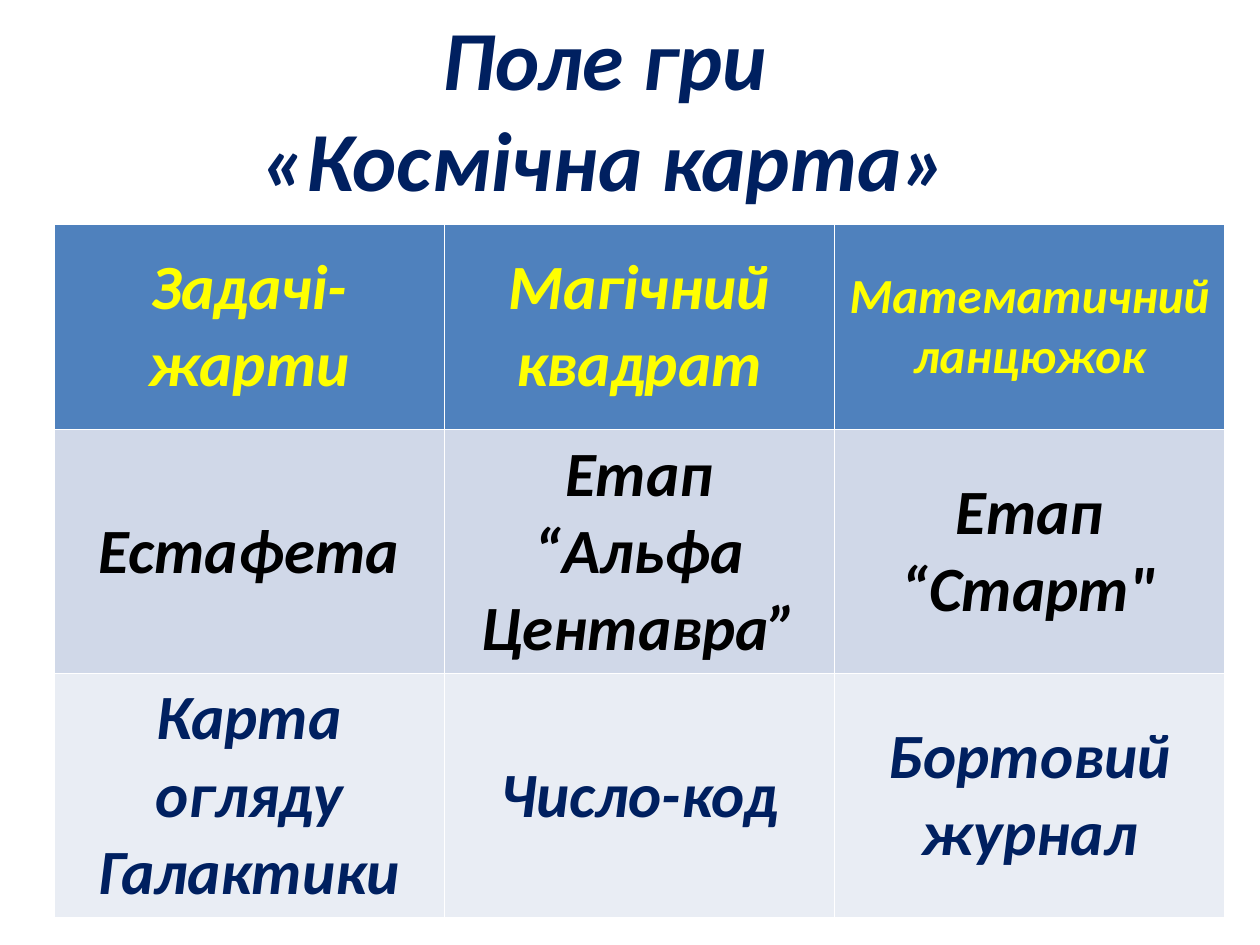
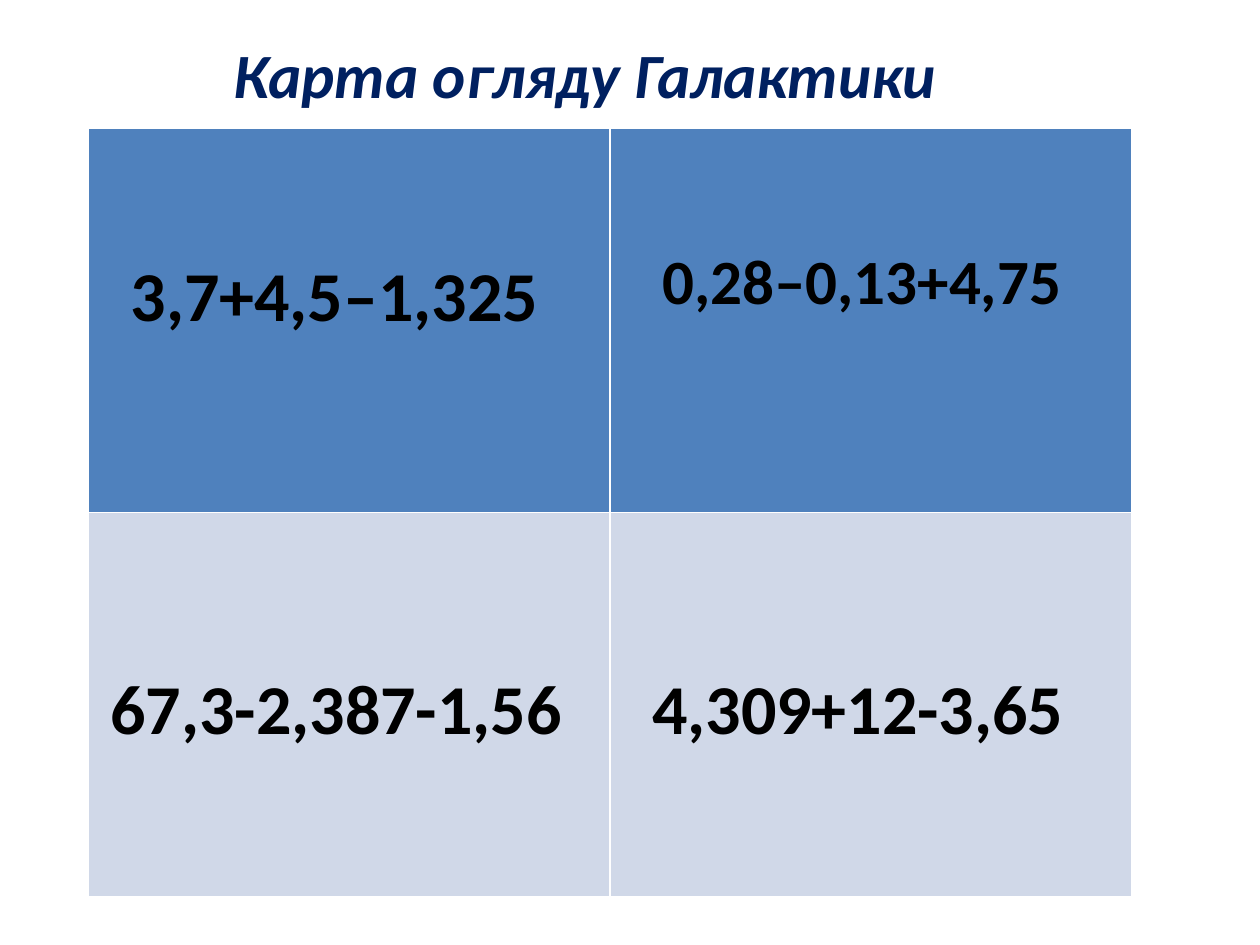
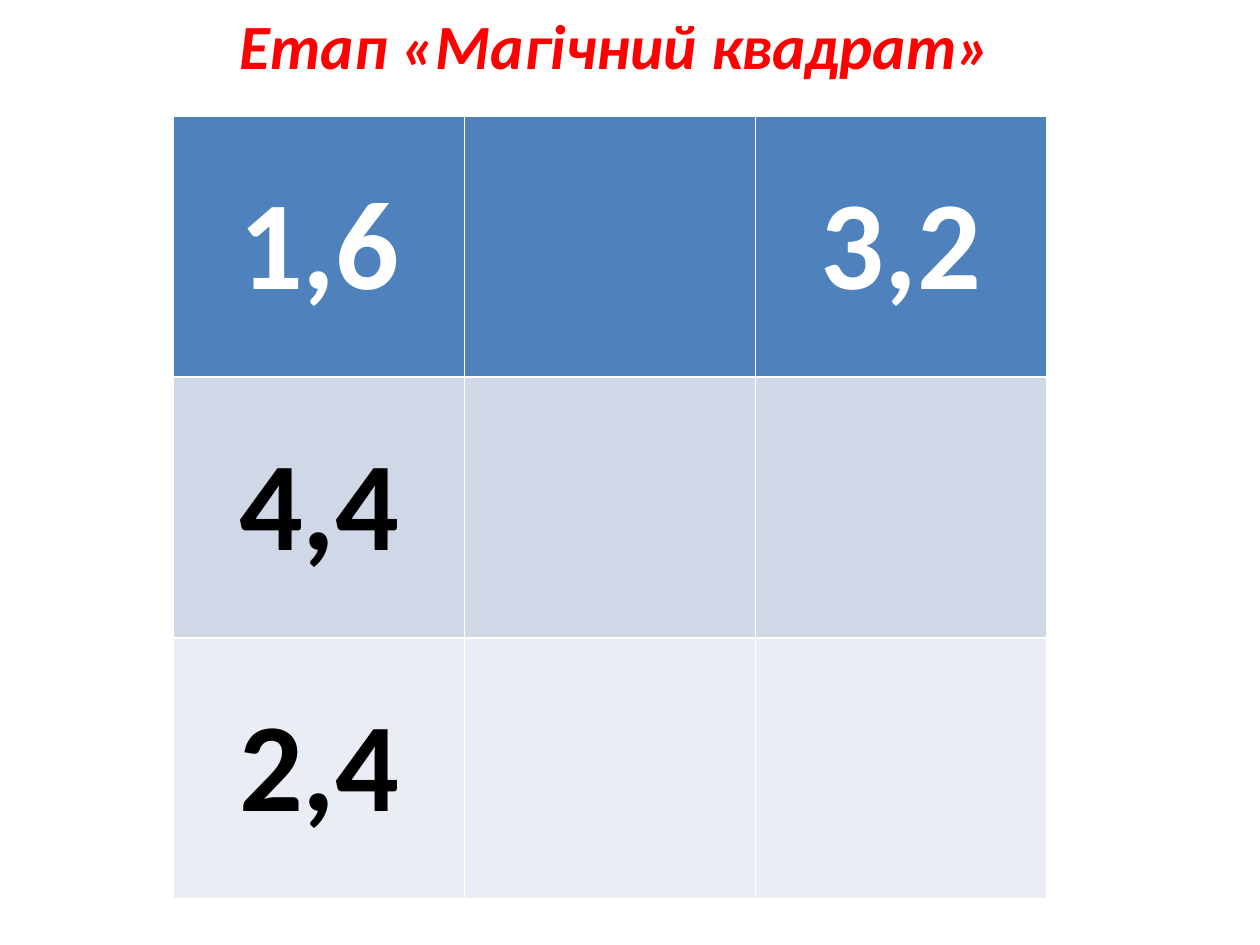
from lxml import etree
from pptx import Presentation
from pptx.dml.color import RGBColor
from pptx.enum.text import MSO_ANCHOR as Anchor, MSO_AUTO_SIZE as AutoSize, PP_ALIGN as Align
from pptx.oxml import parse_xml
from pptx.oxml.ns import nsdecls
from pptx.util import Cm, Pt

NAVY = RGBColor(0x00, 0x20, 0x60)
RED = RGBColor(0xFF, 0x00, 0x00)
YELLOW = RGBColor(0xFF, 0xFF, 0x00)
WHITE = RGBColor(0xFF, 0xFF, 0xFF)
BLACK = RGBColor(0x00, 0x00, 0x00)
HEADER_BLUE = RGBColor(0x4F, 0x81, 0xBD)
BAND_DARK = RGBColor(0xD0, 0xD8, 0xE8)
BAND_LIGHT = RGBColor(0xE9, 0xED, 0xF4)
ROW_FILLS = [HEADER_BLUE, BAND_DARK, BAND_LIGHT]
FONT = "Calibri"
TITLE_ONLY = 5

SLIDES = [
    {
        "title": {"text": "Поле гри\n«Космічна карта»", "box": (1.09, 0, 22.2, 4.37),
                  "size": 48, "color": NAVY},
        "table": {
            "rows": [
                ["Задачі- жарти", "Магічний квадрат", "Математичний ланцюжок"],
                ["Естафета", "Етап “Альфа Центавра”", "Етап “Старт\""],
                ["Карта огляду Галактики", "Число-код", "Бортовий журнал"],
            ],
            "box": (1.09, 4.52, 23.6, 12.42),
            "row_colors": [YELLOW, BLACK, NAVY],
            "size": 36, "italic": True, "small": {"Математичний ланцюжок": 28},
        },
        "expressions": [],
    },
    {
        "title": {"text": "Карта огляду Галактики", "box": (3.76, 0.58, 16.08, 1.8),
                  "size": 36, "color": NAVY},
        "table": {
            "rows": [["", ""], ["", ""]],
            "box": (1.78, 2.59, 21.03, 15.48),
            "row_colors": [BLACK, BLACK],
            "size": 18, "italic": False, "small": {},
        },
        "expressions": [
            ("3,7+4,5–1,325", 2.39, 4.95, 40),
            ("0,28–0,13+4,75", 13.11, 4.75, 36),
            ("4,309+12-3,65", 12.9, 13.28, 40),
            ("67,3-2,387-1,56", 1.98, 13.28, 40),
        ],
    },
    {
        "title": {"text": "Етап «Магічний квадрат»", "box": (4.57, 0, 15.67, 1.8),
                  "size": 36, "color": RED},
        "table": {
            "rows": [["1,6", "", "3,2"], ["4,4", "", ""], ["2,4", "", ""]],
            "box": (3.5, 2.34, 17.6, 15.78),
            "row_colors": [WHITE, BLACK, BLACK],
            "size": 72, "italic": False, "small": {},
        },
        "expressions": [],
    },
]


def format_run(run, size, color, italic=False):
    values = {"name": FONT, "size": Pt(size), "bold": True, "italic": italic}
    for name, value in values.items():
        setattr(run.font, name, value)
    run.font.color.rgb = color


def outline_run(run):
    outline = parse_xml(
        f'<a:ln {nsdecls("a")} w="900"><a:solidFill><a:srgbClr val="{NAVY}">'
        '<a:alpha val="55000"/></a:srgbClr></a:solidFill></a:ln>')
    run.font._element.insert(0, outline)


def set_title(slide, title):
    shape = slide.shapes.title
    for name, value in zip(("left", "top", "width", "height"), title["box"]):
        setattr(shape, name, Cm(value))
    frame = shape.text_frame
    frame.text = title["text"]
    values = {"auto_size": AutoSize.NONE, "word_wrap": True, "vertical_anchor": Anchor.TOP}
    for name, value in values.items():
        setattr(frame, name, value)
    for paragraph in frame.paragraphs:
        paragraph.alignment = Align.CENTER
        for run in paragraph.runs:
            format_run(run, title["size"], title["color"], italic=True)
            outline_run(run)


def add_grid(slide, grid):
    rows = grid["rows"]
    left, top, width, height = grid["box"]
    table = slide.shapes.add_table(
        len(rows), len(rows[0]), Cm(left), Cm(top), Cm(width), Cm(height)).table
    for row_index, texts in enumerate(rows):
        for column_index, text in enumerate(texts):
            cell = table.cell(row_index, column_index)
            cell.fill.solid()
            cell.fill.fore_color.rgb = ROW_FILLS[row_index]
            if not text:
                continue
            cell.text = text
            cell.vertical_anchor = Anchor.MIDDLE
            paragraph = cell.text_frame.paragraphs[0]
            paragraph.alignment = Align.CENTER
            format_run(paragraph.runs[0], grid["small"].get(text, grid["size"]),
                       grid["row_colors"][row_index], grid["italic"])


def add_expression(slide, text, left, top, size):
    frame = slide.shapes.add_textbox(Cm(left), Cm(top), Cm(10.31), Cm(1.9)).text_frame
    frame.word_wrap = True
    frame.text = text
    format_run(frame.paragraphs[0].runs[0], size, BLACK)


def main():
    presentation = Presentation()
    presentation.slide_width = Cm(25.4)
    presentation.slide_height = Cm(19.05)
    for content in SLIDES:
        slide = presentation.slides.add_slide(presentation.slide_layouts[TITLE_ONLY])
        set_title(slide, content["title"])
        add_grid(slide, content["table"])
        for expression in content["expressions"]:
            add_expression(slide, *expression)
    presentation.save("out.pptx")


if __name__ == "__main__":
    main()
